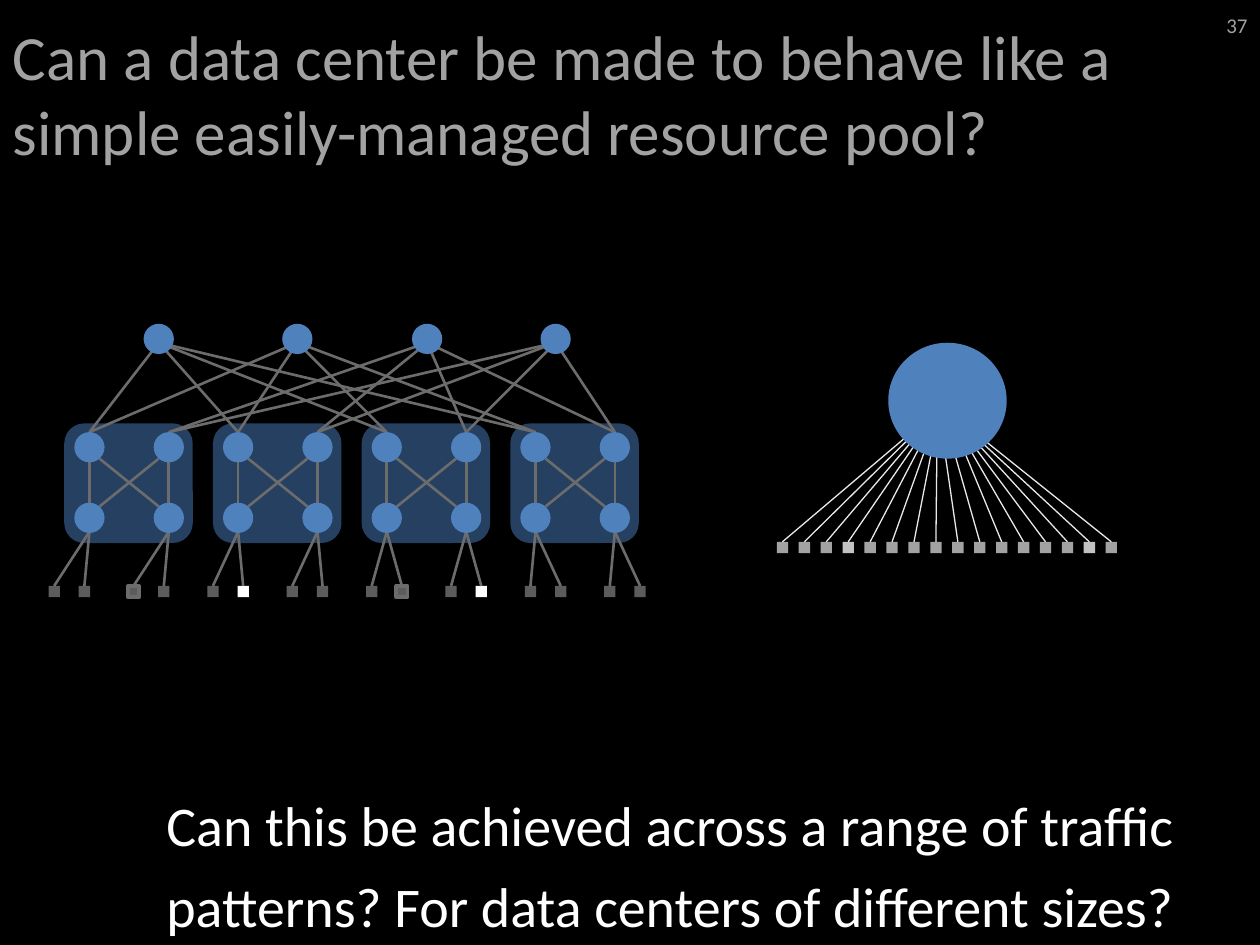
from lxml.etree import SubElement
from pptx import Presentation
from pptx.dml.color import RGBColor
from pptx.enum.shapes import MSO_CONNECTOR as Connector, MSO_SHAPE as Shape
from pptx.enum.text import MSO_ANCHOR as Anchor, MSO_AUTO_SIZE as AutoSize, PP_ALIGN as Align
from pptx.oxml.ns import qn
from pptx.util import Inches, Pt

COLORS = {
    "background": "000000", "title": "A2A2A2", "body": "FFFFFF",
    "switch": "4F81BD", "pod": "254061", "link": "6C6C6C",
    "server": "5C5C5C", "busy server": "FFFFFF",
    "pool server": "A2A2A2", "busy pool server": "C2C2C2", "pool link": "E9E9E9",
}
FONT = "Calibri"
SERVER_SIZE = 0.09
SWITCH_SIZE = 0.24


def color(name):
    return RGBColor.from_string(COLORS[name])


class SlideBuilder:
    def __init__(self, slide):
        self.slide = slide
        self.shapes = slide.shapes
        slide.background.fill.solid()
        slide.background.fill.fore_color.rgb = color("background")

    def start_group(self):
        """Send the following shapes and lines to a new group."""
        self.shapes = self.slide.shapes.add_group_shape().shapes

    def text(self, holder, box, words, size, fill, anchor, align=Align.LEFT):
        holder.left, holder.top, holder.width, holder.height = map(Inches, box)
        frame = holder.text_frame
        frame.word_wrap = True
        frame.auto_size = AutoSize.NONE
        frame.vertical_anchor = anchor
        paragraph = frame.paragraphs[0]
        paragraph.alignment = align
        run = paragraph.add_run()
        run.text = words
        run.font.name = FONT
        run.font.size = Pt(size)
        run.font.color.rgb = color(fill)
        return paragraph

    def shape(self, kind, left, top, width, height, fill, outline=None):
        shape = self.shapes.add_shape(kind, *map(Inches, (left, top, width, height)))
        shape.shadow.inherit = False
        shape.fill.solid()
        shape.fill.fore_color.rgb = color(fill)
        if outline:
            shape.line.color.rgb = color(outline)
            shape.line.width = Pt(2)
        else:
            shape.line.fill.background()
        return shape

    def switch(self, x, y):
        radius = SWITCH_SIZE / 2
        self.shape(Shape.OVAL, x - radius, y - radius, SWITCH_SIZE, SWITCH_SIZE, "switch")

    def server(self, x, top, fill, outline=None):
        return self.shape(Shape.RECTANGLE, x - SERVER_SIZE / 2, top,
                          SERVER_SIZE, SERVER_SIZE, fill, outline)

    def link(self, start, end, fill="link", width=1.5, server=None):
        line = self.shapes.add_connector(Connector.STRAIGHT, *map(Inches, (*start, *end)))
        line.line.color.rgb = color(fill)
        line.line.width = Pt(width)
        SubElement(line._element.spPr, qn("a:effectLst"))
        if server is not None:
            line.begin_connect(server, 0)


def draw_pool(builder):
    """One big switch with every server attached to it."""
    builder.start_group()
    top, count = 4.3, 16
    for i in range(count):
        x = 6.21 + 0.17 * i + 0.06 * i / (count - 1)
        server = builder.server(x, top, "busy pool server" if i in (3, 14) else "pool server")
        if i < 7:
            hub = (7.46, 3.24)
        elif i < 10:
            hub = (7.44, 3.18 if i < 9 else 3.12)
        else:
            hub = (7.52, 3.26)
        builder.link((x, top), hub, "pool link", 0.75, server)
    builder.shape(Shape.OVAL, 7.05, 2.72, 0.94, 0.92, "switch")


def draw_tree(builder):
    """Four pods of switches below a row of core switches."""
    builder.start_group()
    core_y, upper_y, lower_y, server_top = 2.69, 3.55, 4.11, 4.65
    cores = [1.26, 2.36, 3.39, 4.41]
    pods = [(0.71 + 1.18 * i, 1.34 + 1.18 * i) for i in range(4)]
    columns = [x for pod in pods for x in pod]

    for left, _ in pods:
        builder.shape(Shape.ROUNDED_RECTANGLE, left - 0.2, 3.36, 1.02, 0.95, "pod")

    for i in range(2 * len(columns)):
        edge, side = divmod(i, 2)
        x = 0.43 + 0.63 * edge + 0.24 * side
        server = builder.server(x, server_top,
                                "busy server" if i in (5, 11) else "server",
                                "link" if i in (2, 9) else None)
        builder.link((x, server_top), (columns[edge], 4.22), server=server)

    for left, right in pods:
        for x, linked_cores in ((left, cores[:2]), (right, cores[2:])):
            builder.link((x, 3.99), (x, 3.67))
            for core in linked_cores:
                builder.link((x, 3.43), (core, 2.72))
        builder.link((left + 0.08, 4.02), (right - 0.08, 3.64))
        builder.link((left + 0.08, 3.64), (right - 0.08, 4.02))

    for y, row in ((lower_y, columns), (core_y, cores), (upper_y, columns)):
        for x in row:
            builder.switch(x, y)


def main():
    deck = Presentation()
    deck.slide_width, deck.slide_height = Inches(10), Inches(7.5)
    slide = deck.slides.add_slide(deck.slide_layouts[1])
    builder = SlideBuilder(slide)

    builder.text(slide.shapes.title, (0, 0, 10, 1.47),
                 "Can a data center be made to behave like a simple easily-managed resource pool?",
                 36, "title", Anchor.MIDDLE)
    question = builder.text(slide.placeholders[1], (1.22, 4.85, 8.78, 2.65),
                            "Can this be achieved across a range of traffic patterns? "
                            "For data centers of different sizes?",
                            32, "body", Anchor.BOTTOM)
    question.line_spacing = 1.2
    question.space_before = Pt(16)
    properties = question._p.get_or_add_pPr()
    properties.set("marL", "0")
    properties.set("indent", "0")
    SubElement(properties, qn("a:buNone"))

    page_number = slide.shapes.add_textbox(0, 0, 0, 0)
    builder.text(page_number, (9.17, 0, 0.83, 0.4), "37", 12, "title",
                 Anchor.MIDDLE, Align.RIGHT)

    draw_pool(builder)
    draw_tree(builder)
    deck.save("out.pptx")


if __name__ == "__main__":
    main()
